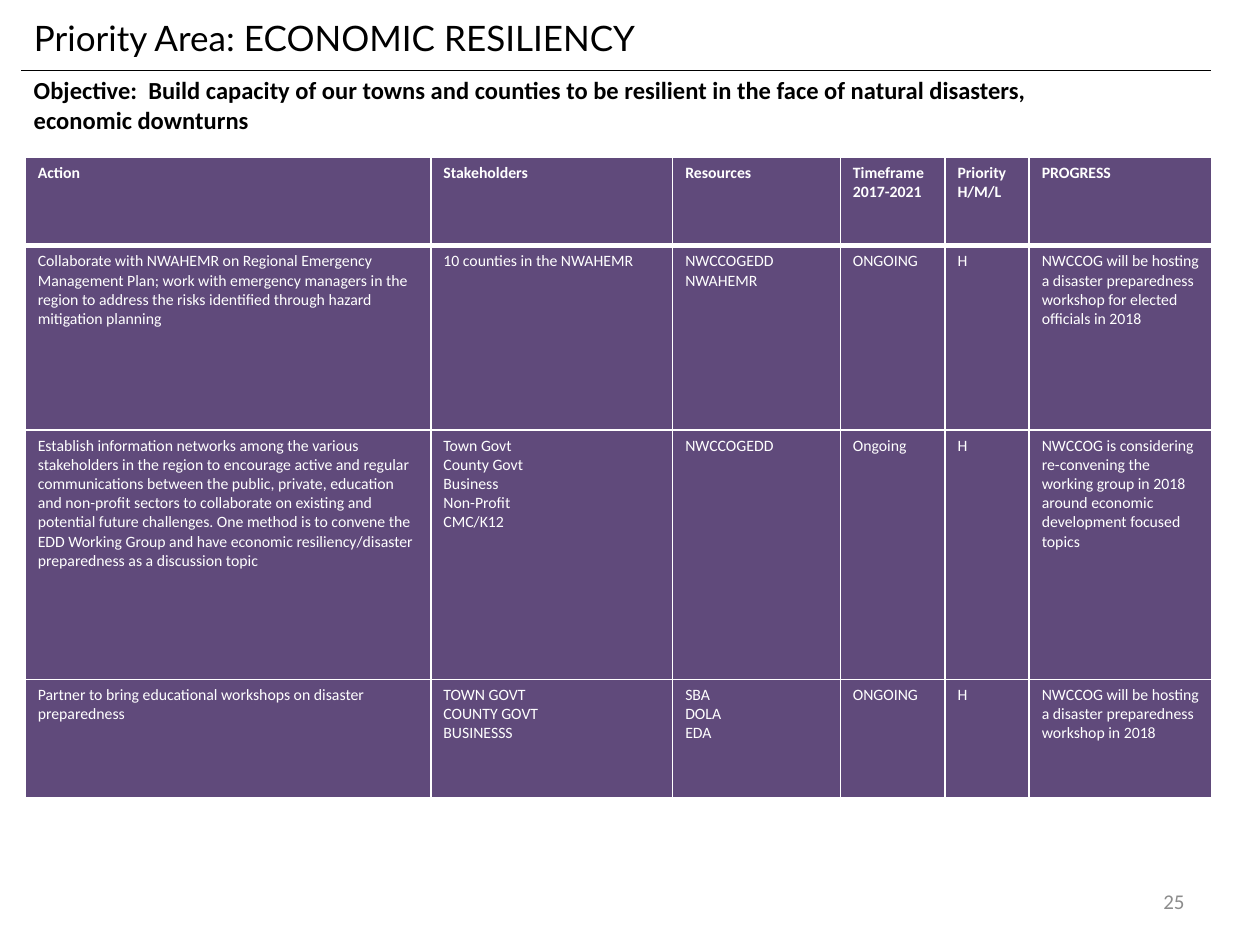
"""Build the economic resiliency action plan slide."""
import lxml.etree
import pptx
import pptx.dml.color
import pptx.enum.shapes
import pptx.enum.text
import pptx.oxml.ns
import pptx.util

Pt = pptx.util.Pt
RGBColor = pptx.dml.color.RGBColor
Align = pptx.enum.text.PP_ALIGN
Anchor = pptx.enum.text.MSO_ANCHOR

BLACK = RGBColor(0x00, 0x00, 0x00)
WHITE = RGBColor(0xFF, 0xFF, 0xFF)
PURPLE = RGBColor(0x60, 0x4A, 0x7B)
GRAY = RGBColor(0x8C, 0x8C, 0x8C)

COLUMN_WIDTHS = [231.8, 138.2, 95.8, 59.8, 48.2, 104.4]
ROW_HEIGHTS = [50.4, 105.4, 142.4, 67.6]
ACTIONS = [
    ["Action", "Stakeholders", "Resources", "Timeframe\n2017-2021",
     "Priority\nH/M/L", "PROGRESS"],
    ["Collaborate with NWAHEMR on Regional Emergency Management Plan; work with "
     "emergency managers in the region to address the risks identified through "
     "hazard mitigation planning",
     "10 counties in the NWAHEMR", "NWCCOGEDD\nNWAHEMR", "ONGOING", "H",
     "NWCCOG will be hosting a disaster preparedness workshop for elected "
     "officials in 2018"],
    ["Establish information networks among the various stakeholders in the region "
     "to encourage active and regular communications between the public, private, "
     "education and non-profit sectors to collaborate on existing and potential "
     "future challenges. One method is to convene the EDD Working Group and have "
     "economic resiliency/disaster preparedness as a discussion topic",
     "Town Govt\nCounty Govt\nBusiness\nNon-Profit\nCMC/K12", "NWCCOGEDD",
     "Ongoing", "H",
     "NWCCOG is considering re-convening the working group in 2018 around "
     "economic development focused topics"],
    ["Partner to bring educational workshops on disaster preparedness",
     "TOWN GOVT\nCOUNTY GOVT\nBUSINESSS", "SBA\nDOLA\nEDA", "ONGOING", "H",
     "NWCCOG will be hosting a disaster preparedness workshop in 2018"],
]


def write(frame, text, font="Calibri", size=9, color=BLACK, bold=False,
          align=Align.LEFT):
    """Fill a text frame with one paragraph for each line of text."""
    for index, line in enumerate(text.split("\n")):
        para = frame.paragraphs[0] if index == 0 else frame.add_paragraph()
        para.alignment = align
        span = para.add_run()
        span.text = line
        span.font.name = font
        span.font.size = Pt(size)
        span.font.bold = bold
        span.font.color.rgb = color


class Page:
    """Hold the current slide and draw each kind of element on it."""

    def __init__(self, deck):
        """Add a title-only slide to the deck."""
        self.slide = deck.slides.add_slide(deck.slide_layouts[5])

    def place(self, box, left, top, width, height, anchor=Anchor.TOP):
        """Position a text shape and return its frame."""
        box.left, box.top = Pt(left), Pt(top)
        box.width, box.height = Pt(width), Pt(height)
        frame = box.text_frame
        frame.word_wrap = True
        frame.auto_size = pptx.enum.text.MSO_AUTO_SIZE.NONE
        frame.vertical_anchor = anchor
        return frame

    def title(self, text, *area, **style):
        """Move the title placeholder and write in it."""
        write(self.place(self.slide.shapes.title, *area), text, **style)

    def text(self, text, *area, anchor=Anchor.TOP, **style):
        """Add a text box."""
        box = self.slide.shapes.add_textbox(0, 0, 0, 0)
        write(self.place(box, *area, anchor=anchor), text, **style)

    def rule(self, left, right, top):
        """Add a thin horizontal line."""
        line = self.slide.shapes.add_connector(
            pptx.enum.shapes.MSO_CONNECTOR.STRAIGHT,
            Pt(left), Pt(top), Pt(right), Pt(top))
        line.line.color.rgb = BLACK
        line.line.width = Pt(0.75)
        lxml.etree.SubElement(line._element.spPr,
                              pptx.oxml.ns.qn("a:effectLst"))

    def border(self, cell, side, width):
        """Draw one white side of a cell."""
        namespace = pptx.oxml.ns.nsdecls("a")
        cell._tc.get_or_add_tcPr().append(pptx.oxml.parse_xml(
            f'<a:ln{side} {namespace} w="{Pt(width)}"><a:solidFill>'
            f'<a:srgbClr val="{WHITE}"/></a:solidFill></a:ln{side}>'))

    def table(self, rows, left, top, widths, heights):
        """Add a table with a bold header row."""
        table = self.slide.shapes.add_table(
            len(rows), len(widths), Pt(left), Pt(top),
            Pt(sum(widths)), Pt(sum(heights))).table
        table.horz_banding = False
        for column, width in zip(table.columns, widths):
            column.width = Pt(width)
        for index, (row, height) in enumerate(zip(table.rows, heights)):
            row.height = Pt(height)
            for cell, text in zip(row.cells, rows[index]):
                for side in "LRTB":
                    thick = (index, side) in ((0, "B"), (1, "T"))
                    self.border(cell, side, 3 if thick else 1)
                cell.fill.solid()
                cell.fill.fore_color.rgb = PURPLE
                write(cell.text_frame, text, color=WHITE, bold=index == 0)


def main():
    """Build and save the deck."""
    deck = pptx.Presentation()
    deck.slide_width, deck.slide_height = Pt(720), Pt(540)
    page = Page(deck)
    page.title("Priority Area: ECONOMIC RESILIENCY", 12.2, 5.8, 624, 32,
               font="Lato", size=20)
    page.text("Objective:  Build capacity of our towns and counties to be resilient "
              "in the face of natural disasters, economic downturns",
              12.2, 39.6, 624, 41, size=14, bold=True)
    page.table(ACTIONS, 14.4, 90, COLUMN_WIDTHS, ROW_HEIGHTS)
    page.rule(12.2, 692, 40.3)
    page.text("25", 516, 500.5, 168, 28.8, anchor=Anchor.MIDDLE, size=12,
              color=GRAY, align=Align.RIGHT)
    deck.save("out.pptx")


if __name__ == "__main__":
    main()
